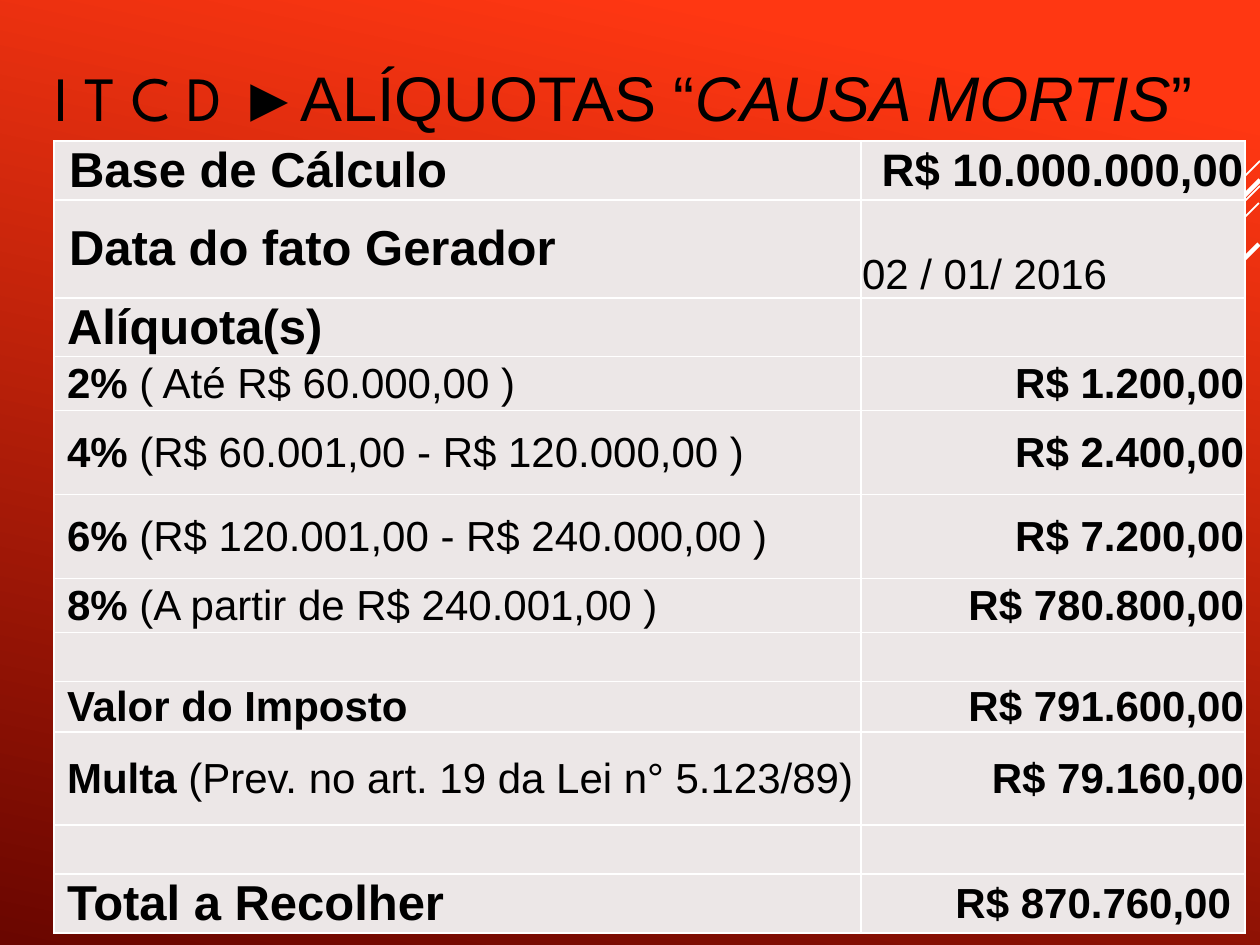
from lxml import etree
from pptx import Presentation
from pptx import util as u
from pptx.dml.color import RGBColor
from pptx.enum import shapes, text
from pptx.oxml import ns

PX = 914400 / 126
BLACK = RGBColor(0x00, 0x00, 0x00)
WHITE = RGBColor(0xFF, 0xFF, 0xFF)
CELL_GREY = RGBColor(0xEC, 0xE7, 0xE7)
BRIGHT_RED = RGBColor(0xFF, 0x37, 0x12)
DARK_RED = RGBColor(0x6A, 0x06, 0x00)

LEFT, RIGHT, CENTER = text.PP_ALIGN.LEFT, text.PP_ALIGN.RIGHT, text.PP_ALIGN.CENTER
MIDDLE, BOTTOM = text.MSO_ANCHOR.MIDDLE, text.MSO_ANCHOR.BOTTOM


def px(length):
    return u.Emu(round(length * PX))


def apply(target, **values):
    for name, value in values.items():
        setattr(target, name, value)


class SlideBuilder:
    font = "Arial"

    def __init__(self, slide):
        self.slide = slide

    def background(self, stops, clockwise_angle):
        fill = self.slide.background.fill
        fill.gradient()
        fill.gradient_angle = 360 - clockwise_angle
        for stop, (position, color) in zip(fill.gradient_stops, stops):
            stop.position = position
            stop.color.rgb = color

    def diagonal(self, x, y, run, weight):
        """Draw a 45 degree line going down and left."""
        ray = self.slide.shapes.add_connector(
            shapes.MSO_CONNECTOR.STRAIGHT, px(x), px(y), px(x - run), px(y + run))
        ray.line.color.rgb = WHITE
        ray.line.width = u.Pt(weight)
        etree.SubElement(ray._element.spPr, ns.qn("a:effectLst"))

    def add_runs(self, paragraph, runs, align):
        """Add runs given as (wording, font values)."""
        paragraph.alignment = align
        for wording, values in runs:
            run = paragraph.add_run()
            run.text = wording
            apply(run.font, **{"name": self.font, **values})
            run.font.color.rgb = BLACK

    def title(self, box, runs):
        frame = self.slide.shapes.add_textbox(*map(px, box)).text_frame
        apply(frame, word_wrap=True, vertical_anchor=BOTTOM, margin_left=0, margin_right=0)
        self.add_runs(frame.paragraphs[0], runs, CENTER)

    def borders(self, cell):
        properties = cell._tc.get_or_add_tcPr()
        for place, side in enumerate(("lnL", "lnR", "lnT", "lnB")):
            edge = etree.Element(ns.qn(f"a:{side}"), w=str(u.Pt(1)))
            fill = etree.SubElement(edge, ns.qn("a:solidFill"))
            etree.SubElement(fill, ns.qn("a:srgbClr"), val=str(WHITE))
            properties.insert(place, edge)

    def cell(self, cell, runs, align, indent=1, anchor=MIDDLE):
        near, far = (1, indent) if align == RIGHT else (indent, 1)
        apply(cell, margin_left=px(near), margin_right=px(far),
              margin_top=0, margin_bottom=0, vertical_anchor=anchor)
        cell.fill.solid()
        cell.fill.fore_color.rgb = CELL_GREY
        self.borders(cell)
        self.add_runs(cell.text_frame.paragraphs[0], runs, align)

    def table(self, left, top, widths, rows):
        """Rows are (height, label cell values, amount cell values)."""
        grid = self.slide.shapes.add_table(
            len(rows), len(widths), px(left), px(top),
            px(sum(widths)), px(sum(row[0] for row in rows))).table
        apply(grid, first_row=False, horz_banding=False)
        for column, width in zip(grid.columns, widths):
            column.width = px(width)
        for index, (height, *cells) in enumerate(rows):
            grid.rows[index].height = px(height)
            for column, values in enumerate(cells):
                self.cell(grid.cell(index, column), **values)


def label(bold="", plain="", size=24, indent=13):
    parts = ((bold, True), (plain, False))
    runs = [(part, {"size": u.Pt(size), "bold": heavy}) for part, heavy in parts if part]
    return {"runs": runs, "align": LEFT, "indent": indent}


def amount(value="", size=24, indent=1):
    return {**label(value, size=size, indent=indent), "align": RIGHT}


RAYS = [(1260, 161, 432, 1), (1260, 186, 664, 1), (1259, 203, 539, 1),
        (1260, 180, 529, 2.5), (1259, 244, 473, 2.5)]

ROWS = [
    (58, label("Base de Cálculo", size=28, indent=15), amount("R$ 10.000.000,00", size=26)),
    (98, label("Data do fato Gerador", size=28, indent=15),
     {**label(plain="02 / 01/ 2016", indent=1), "anchor": BOTTOM}),
    (58, label("Alíquota(s)", size=28), amount()),
    (54, label("2% ", "( Até R$ 60.000,00 )"), amount("R$ 1.200,00")),
    (84, label("4%", " (R$ 60.001,00 - R$ 120.000,00 )"), amount("R$ 2.400,00")),
    (84, label("6%", " (R$ 120.001,00 - R$ 240.000,00 )"), amount("R$ 7.200,00")),
    (54, label("8%", " (A partir de R$ 240.001,00 )"), amount("R$ 780.800,00")),
    (49, label(), amount()),
    (49, label("Valor do Imposto"), amount("R$ 791.600,00")),
    (93, label("Multa ", "(Prev. no art. 19 da Lei n° 5.123/89)"), amount("R$ 79.160,00")),
    (49, label(), amount()),
    (58, label("Total a Recolher", size=28), amount("R$ 870.760,00", indent=14)),
]


def main():
    deck = Presentation()
    apply(deck, slide_width=px(1260), slide_height=px(945))
    builder = SlideBuilder(deck.slides.add_slide(deck.slide_layouts[6]))
    builder.background([(0.1, BRIGHT_RED), (1, DARK_RED)], 102)
    for ray in RAYS:
        builder.diagonal(*ray)
    heading = {"size": u.Pt(36)}
    builder.title((28, 45, 1191, 95), [
        ("I T C D ", {**heading, "name": "League Spartan"}),
        ("►ALÍQUOTAS “", heading),
        ("CAUSA MORTIS", {**heading, "italic": True}),
        ("”", heading),
    ])
    builder.table(54, 141, (807, 384), ROWS)
    deck.save("out.pptx")


if __name__ == "__main__":
    main()
